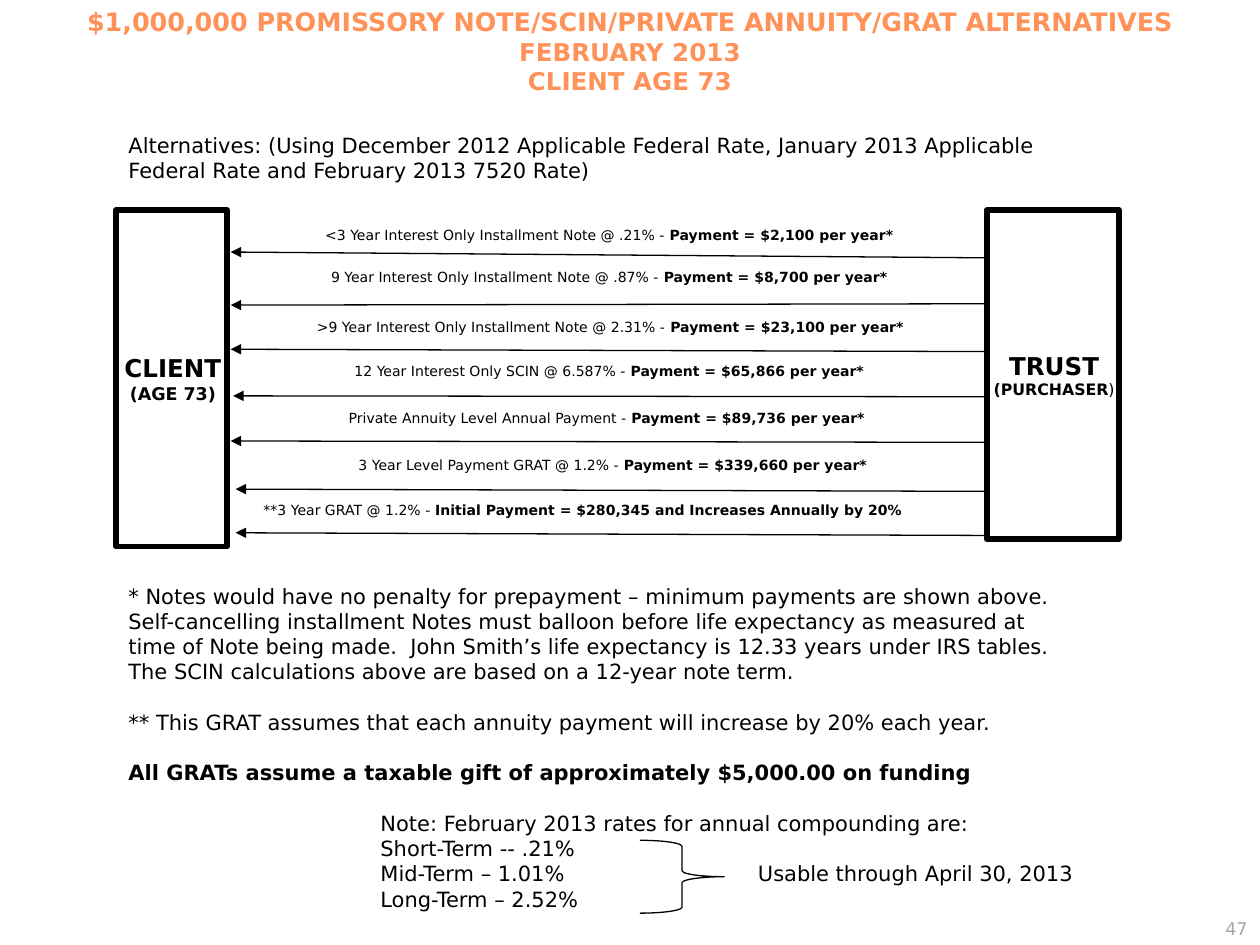
from lxml.etree import SubElement
from pptx import Presentation
from pptx.dml.color import RGBColor
from pptx.enum.shapes import MSO_CONNECTOR, MSO_SHAPE
from pptx.enum.text import MSO_ANCHOR, MSO_AUTO_SIZE, PP_ALIGN
from pptx.oxml.ns import qn
from pptx.util import Cm, Pt

COLOURS = {"title": "FF9258", "ink": "000000", "paper": "FFFFFF", "page": "A8A49B"}
FONT = "DejaVu Sans"
BLANK_LINE = 14.5  # points, about one line of 12 pt text


def colour(name):
    return RGBColor.from_string(COLOURS[name])


def add_run(paragraph, text, size=12, bold=False, ink="ink"):
    run = paragraph.add_run()
    run.text = text
    run.font.name = FONT
    run.font.size = Pt(size)
    run.font.bold = bold
    run.font.color.rgb = colour(ink)


def write(frame, paragraphs, align=PP_ALIGN.LEFT):
    """Fill a frame; each paragraph is a list of (text, run format) pairs."""
    frame.word_wrap = True
    for index, runs in enumerate(paragraphs):
        paragraph = frame.add_paragraph() if index else frame.paragraphs[0]
        paragraph.alignment = align
        for text, run_format in runs:
            add_run(paragraph, text, **run_format)


class SlideBuilder:
    """Draws on one slide; all lengths are in centimetres."""

    def __init__(self, slide, thin=0.75, thick=3.35):
        self.slide = slide
        self.thin = thin
        self.thick = thick

    def text(self, box, paragraphs, align=PP_ALIGN.LEFT, anchor=MSO_ANCHOR.TOP, grow=True):
        frame = self.slide.shapes.add_textbox(*map(Cm, box)).text_frame
        write(frame, paragraphs, align)
        frame.vertical_anchor = anchor
        frame.auto_size = MSO_AUTO_SIZE.SHAPE_TO_FIT_TEXT if grow else MSO_AUTO_SIZE.NONE
        return frame

    def outline(self, kind, box, width):
        shape = self.slide.shapes.add_shape(kind, *map(Cm, box))
        shape.shadow.inherit = False
        shape.fill.background()
        shape.line.color.rgb = colour("ink")
        shape.line.width = Pt(width)
        return shape

    def party(self, box, paragraphs):
        shape = self.outline(MSO_SHAPE.RECTANGLE, box, self.thick)
        shape.fill.solid()
        shape.fill.fore_color.rgb = colour("paper")
        frame = shape.text_frame
        frame.margin_left = Cm(0.05)
        frame.margin_top = frame.margin_right = frame.margin_bottom = 0
        frame.vertical_anchor = MSO_ANCHOR.MIDDLE
        write(frame, paragraphs, PP_ALIGN.CENTER)

    def brace(self, box):
        self.outline(MSO_SHAPE.RIGHT_BRACE, box, self.thin)

    def arrow(self, start, end):
        connector = self.slide.shapes.add_connector(
            MSO_CONNECTOR.STRAIGHT, *map(Cm, start + end))
        connector.line.color.rgb = colour("ink")
        connector.line.width = Pt(self.thin)
        SubElement(connector.line._get_or_add_ln(), qn("a:tailEnd"), type="triangle")
        SubElement(connector._element.spPr, qn("a:effectLst"))


# terms, payment, label box, arrow start, arrow end
PAYMENTS = [
    ("<3 Year Interest Only Installment Note @ .21% - ", "Payment = $2,100 per year*",
     (4.88, 4.45, 14.81, 0.6), (21.51, 5.21), (4.65, 5.08)),
    ("9 Year Interest Only Installment Note @ .87% - ", "Payment = $8,700 per year*",
     (4.88, 5.28, 14.81, 0.6), (21.79, 6.12), (4.65, 6.15)),
    (">9 Year Interest Only Installment Note @ 2.31% - ", "Payment = $23,100 per year*",
     (4.9, 6.3, 14.81, 0.6), (20.75, 7.09), (4.65, 7.04)),
    ("12 Year Interest Only SCIN @ 6.587% - ", "Payment = $65,866 per year*",
     (4.88, 7.19, 14.81, 0.6), (21.57, 8.0), (4.7, 7.98)),
    ("Private Annuity Level Annual Payment - ", "Payment = $89,736 per year*",
     (4.83, 8.13, 14.81, 0.6), (21.51, 8.92), (4.65, 8.89)),
    ("3 Year Level Payment GRAT @ 1.2% - ", "Payment = $339,660 per year*",
     (4.95, 9.07, 14.81, 0.6), (21.54, 9.91), (4.75, 9.86)),
    ("**3 Year GRAT @ 1.2% - ", "Initial Payment = $280,345 and Increases Annually by 20%",
     (3.73, 9.98, 16.05, 0.6), (21.59, 10.8), (4.75, 10.74)),
]

FOOTNOTES = [
    "* Notes would have no penalty for prepayment – minimum payments are shown above.",
    "Self-cancelling installment Notes must balloon before life expectancy as measured at "
    "time of Note being made.  John Smith’s life expectancy is 12.33 years under IRS tables.",
    "The SCIN calculations above are based on a 12-year note term.",
    "** This GRAT assumes that each annuity payment will increase by 20% each year.",
]
GIFT = "All GRATs assume a taxable gift of approximately $5,000.00 on funding"
RATES = [
    "Note: February 2013 rates for annual compounding are:",
    "Short-Term -- .21%",
    "Mid-Term – 1.01%",
    "Long-Term – 2.52%",
]


def add_notes(builder):
    plain = [[(text, {})] for text in FOOTNOTES]
    rates = [[(text, {})] for text in RATES]
    gift = [(GIFT, {"bold": True})]
    frame = builder.text((2.34, 11.63, 19.68, 6.93), plain + [gift] + rates)
    paragraphs = frame.paragraphs
    first_rate = len(plain) + 1
    for index in (first_rate - 2, first_rate - 1, first_rate):
        paragraphs[index].space_before = Pt(BLANK_LINE)
    for paragraph in paragraphs[first_rate:]:
        properties = paragraph._p.get_or_add_pPr()
        properties.set("marL", str(Cm(5.08)))
        properties.set("indent", "0")
    builder.brace((12.9, 16.94, 1.7, 1.47))
    builder.text((15.03, 17.23, 7.2, 0.75), [[("Usable through April 30, 2013", {})]])


def main():
    presentation = Presentation()
    presentation.slide_width = Cm(25.4)
    presentation.slide_height = Cm(19.05)
    builder = SlideBuilder(presentation.slides.add_slide(presentation.slide_layouts[6]))

    heading = {"size": 14, "bold": True, "ink": "title"}
    builder.text((0, 0, 25.4, 2.08), [
        [("$1,000,000 PROMISSORY NOTE/SCIN/PRIVATE ANNUITY/GRAT ALTERNATIVES",
          {**heading, "size": 14.5})],
        [("FEBRUARY 2013", heading)],
        [("CLIENT AGE 73", heading)],
    ], PP_ALIGN.CENTER)
    builder.text((2.34, 2.54, 19.68, 1.3), [[(
        "Alternatives: (Using December 2012 Applicable Federal Rate, January 2013 "
        "Applicable Federal Rate and February 2013 7520 Rate)", {})]])

    for terms, payment, box, start, end in PAYMENTS:
        builder.arrow(start, end)
        builder.text(box, [[(terms, {"size": 8}), (payment, {"size": 8, "bold": True})]],
                     PP_ALIGN.CENTER)

    name = {"size": 14, "bold": True}
    builder.party((2.34, 4.24, 2.24, 6.78), [
        [("CLIENT", name)], [("(AGE 73)", {"size": 10, "bold": True})]])
    builder.party((19.89, 4.24, 2.67, 6.63), [
        [("TRUST", name), (" (PURCHASER", {"size": 9, "bold": True}), (")", {"size": 9})]])

    add_notes(builder)
    builder.text((19.48, 18.03, 5.92, 1.02), [[("47", {"size": 10, "ink": "page"})]],
                 PP_ALIGN.RIGHT, MSO_ANCHOR.BOTTOM, grow=False)
    presentation.save("out.pptx")


if __name__ == "__main__":
    main()
